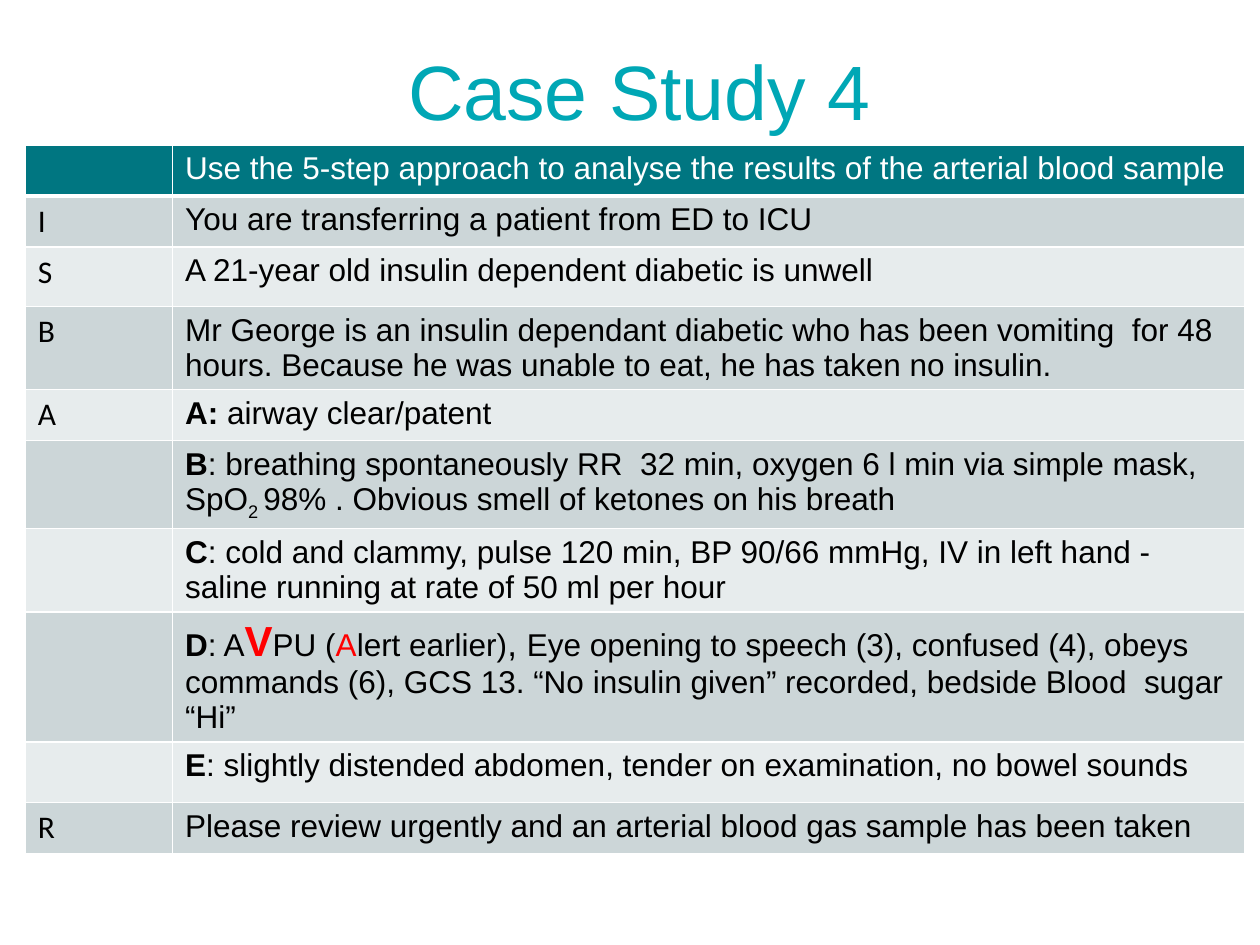
from lxml import etree
from pptx import Presentation
from pptx import util as u
from pptx.dml.color import RGBColor
from pptx.enum import text
from pptx.oxml.ns import qn

# Content: each row is (letter, height in inches, runs); a run is (words, style)
TITLE = "Case Study 4"
BOLD = {"bold": True}
RED = {"color": "FF0000"}
ROWS = [
    ("", 0.38, [("Use the 5-step approach to analyse the results of the "
                 "arterial blood sample", {"color": "FFFFFF"})]),
    ("I", 0.38, [("You are transferring a patient from ED to ICU", {})]),
    ("S", 0.47, [("A 21-year old insulin dependent diabetic is unwell", {})]),
    ("B", 0.66, [("Mr George is an insulin dependant diabetic who has been "
                  "vomiting  for 48 hours. Because he was unable to eat, "
                  "he has taken no insulin.", {})]),
    ("A", 0.38, [("A: ", BOLD), ("airway clear/patent", {})]),
    ("", 0.66, [("B", BOLD),
                (": breathing spontaneously RR  32 min, oxygen 6 l min via "
                 "simple mask, SpO", {}),
                ("2 ", {"base": -25}),
                ("98% . Obvious smell of ketones on his breath", {})]),
    ("", 0.46, [("C", BOLD),
                (": cold and clammy, pulse 120 min, BP 90/66 mmHg, IV in left "
                 "hand - saline running at rate of 50 ml per hour", {})]),
    ("", 0.38, [("D", BOLD), (": A", {}),
                ("V", {"size": 24, **BOLD, **RED}), ("PU (", {}),
                ("A", RED), ("lert earlier)", {}), (", ", {"size": 20}),
                ("Eye opening to speech (3), confused (4), obeys commands (6), "
                 "GCS 13. “No insulin given” recorded, bedside Blood  sugar "
                 "“Hi”", {})]),
    ("", 0.48, [("E", BOLD),
                (": slightly distended abdomen, tender on examination, "
                 "no bowel sounds", {})]),
    ("R", 0.38, [("Please review urgently and an arterial blood gas sample "
                  "has been taken", {})]),
]
COLS = (1.17, 8.51)
HEAD, BANDS = "007681", ("E7ECED", "CCD6D8")


def rgb(code):
    return RGBColor.from_string(code)


def add_run(para, words, size=18, face="Arial", color="000000",
            bold=False, base=None):
    run = para.add_run()
    run.text = words
    font = run.font
    font.size, font.name, font.bold = u.Pt(size), face, bold
    font.color.rgb = rgb(color)
    if base:
        font._element.set("baseline", str(base * 1000))


def style_cell(cell, color, foot):
    """White borders, then the fill, in the order the schema asks for."""
    props = cell._tc.get_or_add_tcPr()
    for side, width in (("L", 1), ("R", 1), ("T", 1), ("B", foot)):
        line = etree.SubElement(props, qn(f"a:ln{side}"), w=str(u.Pt(width)))
        fill = etree.SubElement(line, qn("a:solidFill"))
        etree.SubElement(fill, qn("a:srgbClr"), val="FFFFFF")
    cell.fill.solid()
    cell.fill.fore_color.rgb = rgb(color)


def add_grid(slide):
    heights = [row[1] for row in ROWS]
    grid = slide.shapes.add_table(
        len(ROWS), len(COLS), u.Inches(0.2), u.Inches(1.15),
        u.Inches(sum(COLS)), u.Inches(sum(heights))).table
    for col, width in zip(grid.columns, COLS):
        col.width = u.Inches(width)
    for i, (letter, height, runs) in enumerate(ROWS):
        grid.rows[i].height = u.Inches(height)
        for j in range(len(COLS)):
            style_cell(grid.cell(i, j), BANDS[i % 2] if i else HEAD,
                       1 if i else 3)
        if letter:
            add_run(grid.cell(i, 0).text_frame.paragraphs[0], letter,
                    face="Calibri")
        para = grid.cell(i, 1).text_frame.paragraphs[0]
        for words, style in runs:
            add_run(para, words, **style)


def add_title(slide):
    box = slide.shapes.add_textbox(u.Inches(0.35), u.Inches(0.29),
                                   u.Inches(9.45), u.Inches(0.84))
    frame = box.text_frame
    frame.word_wrap = True
    frame.vertical_anchor = text.MSO_ANCHOR.MIDDLE
    para = frame.paragraphs[0]
    para.alignment = text.PP_ALIGN.CENTER
    add_run(para, TITLE, size=44, color="00A7B5")


def main():
    deck = Presentation()
    deck.slide_width, deck.slide_height = u.Inches(10), u.Inches(7.5)
    slide = deck.slides.add_slide(deck.slide_layouts[6])
    add_grid(slide)
    add_title(slide)
    deck.save("out.pptx")


if __name__ == "__main__":
    main()
